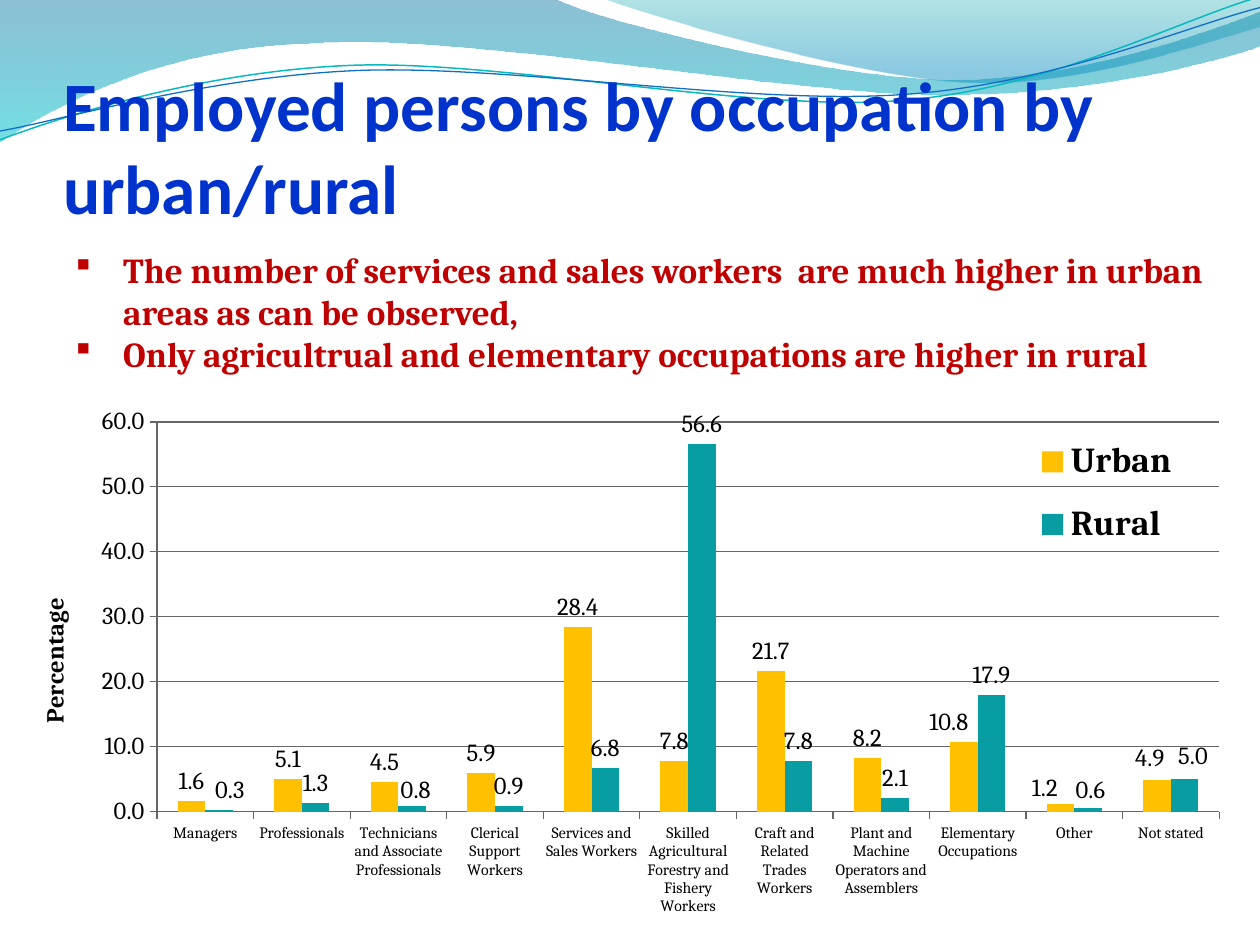
"""Build a slide on employed persons by occupation in urban and rural areas."""
import math
from dataclasses import dataclass

from lxml import etree
from pptx import Presentation
from pptx import util as u
from pptx.chart.data import CategoryChartData
from pptx.dml.color import RGBColor
from pptx.enum import chart as ch
from pptx.enum import text
from pptx.oxml import parse_xml
from pptx.oxml.ns import nsdecls, qn

COLORS = {
    "title": "0033CC", "findings": "C00000", "black": "000000", "grid": "666666",
    "urban": "FFC000", "rural": "089CA3", "teal_line": "0AB8BF", "blue_line": "0F6FC6",
    "deep_blue": "0074A1", "cyan": "00C6CF", "teal": "00A1A9", "sky": "008BBF",
}


@dataclass(frozen=True)
class Stop:
    position: float
    color: str
    opacity: int


@dataclass(frozen=True)
class Wave:
    """An outline whose two-number steps are lines and six-number steps are curves."""
    box: tuple
    start: tuple
    steps: tuple
    stops: tuple = ()
    line_color: str = ""
    line_width: float = 0
    rotation: float = 0


@dataclass(frozen=True)
class Area:
    name: str
    color: str
    values: tuple
    label_shifts: dict


WAVES = (
    Wave((-0.01, -0.01, 10.02, 1.14), (0, 0),
         ((4.4, -0.01), (4.76, 0.17, 6.64, 0.63, 7.58, 0.63),
          (8.53, 0.63, 9.58, 0.26, 10, 0.09), (10.01, 0.36),
          (9.83, 0.44, 8.7, 0.76, 7.46, 0.75), (6.22, 0.75, 3.82, 0.28, 2.57, 0.34),
          (1.29, 0.36, 0.46, 0.83, -0.01, 1.13), (0, 0)),
         stops=(Stop(0, "deep_blue", 45), Stop(1, "cyan", 55))),
    Wave((4.79, -0.01, 5.21, 0.7), (4.79, -0.01),
         ((5.09, 0.11, 6.82, 0.62, 7.69, 0.65), (8.56, 0.69, 9.61, 0.32, 10, 0.21),
          (10, 0), (4.79, -0.01)),
         stops=(Stop(0, "teal", 30), Stop(0.8, "sky", 45))),
    Wave((-0.02, 0.22, 10.02, 0.71), (0, 1.11),
         ((0.48, 0.93, 1.58, 0.57, 2.77, 0.52), (3.95, 0.47, 5.93, 0.89, 7.13, 0.8),
          (8.33, 0.71, 9.38, 0.15, 9.98, -0.02)),
         line_color="teal_line", line_width=0.85, rotation=357.3),
    Wave((-0.02, 0.3, 10.03, 0.58), (0, 1.04),
         ((0.47, 0.96, 1.64, 0.61, 2.83, 0.56), (4.03, 0.51, 5.97, 0.84, 7.17, 0.75),
          (8.36, 0.67, 9.41, 0.21, 10, 0.06)),
         line_color="blue_line", line_width=0.75, rotation=357.3),
)
OCCUPATIONS = (
    "Managers", "Professionals", "Technicians and Associate Professionals",
    "Clerical Support Workers", "Services and Sales Workers",
    "Skilled Agricultural Forestry and Fishery Workers", "Craft and Related Trades Workers",
    "Plant and Machine Operators and Assemblers", "Elementary Occupations", "Other", "Not stated",
)
AREAS = (
    Area("Urban", "urban", (1.6, 5.1, 4.5, 5.9, 28.4, 7.8, 21.7, 8.2, 10.8, 1.2, 4.9),
         {8: (-0.0125, 0), 9: (-0.013, 0.007), 10: (-0.006, -0.004)}),
    Area("Rural", "rural", (0.3, 1.3, 0.8, 0.9, 6.8, 56.6, 7.8, 2.1, 17.9, 0.6, 5.0),
         {0: (0.009, 0), 2: (0.003, 0.006), 9: (0.002, 0.004), 10: (0.007, -0.006)}),
)
FINDINGS = (
    "The number of services and sales workers  are much higher in urban areas as can be observed,",
    "Only agricultrual and elementary occupations are higher in rural",
)


def rgb(name: str) -> RGBColor:
    return RGBColor.from_string(COLORS[name])


def set_font(font, size: float, color: str, name: str = "Cambria", bold: bool = True) -> None:
    font.size, font.name, font.bold = u.Pt(size), name, bold
    font.color.rgb = rgb(color)


def local_point(wave: Wave, x: float, y: float) -> tuple:
    """Return a slide point in EMU within the wave's box before its rotation."""
    left, top, width, height = wave.box
    dx, dy = x - left - width / 2, y - top - height / 2
    angle = math.radians(-wave.rotation)
    return (u.Inches(dx * math.cos(angle) - dy * math.sin(angle) + width / 2),
            u.Inches(dx * math.sin(angle) + dy * math.cos(angle) + height / 2))


def build_outline(slide, wave: Wave):
    builder = slide.shapes.build_freeform(*local_point(wave, *wave.start))
    builder.add_line_segments([local_point(wave, *step[-2:]) for step in wave.steps],
                              close=bool(wave.stops))
    shape = builder.convert_to_shape()
    shape.left, shape.top, shape.width, shape.height = map(u.Inches, wave.box)
    shape.rotation = wave.rotation
    outline = shape._element.spPr.find(".//" + qn("a:path"))
    outline.set("w", str(shape.width))
    outline.set("h", str(shape.height))
    commands = [command for command in outline if command.tag != qn("a:close")]
    for command, step in zip(commands, (wave.start, *wave.steps)):
        if len(step) == 6:
            command.tag = qn("a:cubicBezTo")
        for point in list(command):
            command.remove(point)
        for index in range(0, len(step), 2):
            x, y = local_point(wave, *step[index:index + 2])
            etree.SubElement(command, qn("a:pt"), x=str(x), y=str(y))
    return shape


def draw_wave(slide, wave: Wave) -> None:
    shape = build_outline(slide, wave)
    shape.shadow.inherit = False
    if not wave.stops:
        shape.fill.background()
        shape.line.color.rgb = rgb(wave.line_color)
        shape.line.width = u.Pt(wave.line_width)
        return
    shape.line.fill.background()
    shape.fill.gradient()
    shape.fill.gradient_angle = 270
    for gradient_stop, stop in zip(shape.fill.gradient_stops, wave.stops):
        gradient_stop.position = stop.position
        gradient_stop.color.rgb = rgb(stop.color)
    for color, stop in zip(shape._element.spPr.iter(qn("a:srgbClr")), wave.stops):
        etree.SubElement(color, qn("a:alpha"), val=str(stop.opacity * 1000))


def place(element, index: int, **fractions) -> None:
    """Give a chart part a manual layout as its child at the index."""
    for old in element.findall(qn("c:layout")):
        element.remove(old)
    parts = "".join(f'<c:{key} val="{value}"/>' for key, value in fractions.items())
    element.insert(index, parse_xml(
        f'<c:layout {nsdecls("c")}><c:manualLayout>{parts}</c:manualLayout></c:layout>'))


def style_area(series, area: Area) -> None:
    series.format.fill.solid()
    series.format.fill.fore_color.rgb = rgb(area.color)
    series.invert_if_negative = False
    labels = series.data_labels
    labels.show_value = True
    labels.number_format, labels.number_format_is_linked = "0.0", False
    labels.position = ch.XL_LABEL_POSITION.OUTSIDE_END
    set_font(labels.font, 14, "black", bold=False)
    for index, (x, y) in area.label_shifts.items():
        label = series.points[index].data_label
        set_font(label.font, 14, "black", bold=False)
        label.position = ch.XL_LABEL_POSITION.OUTSIDE_END
        place(label._dLbl, 1, x=x, y=y)


def draw_chart(slide) -> None:
    data = CategoryChartData(number_format="0.0")
    data.categories = OCCUPATIONS
    for area in AREAS:
        data.add_series(area.name, area.values)
    box = map(u.Inches, (0.25, 3.03, 9.58, 4.31))
    chart = slide.shapes.add_chart(ch.XL_CHART_TYPE.COLUMN_CLUSTERED, *box, data).chart
    set_font(chart.font, 18, "black", bold=False)
    chart.has_title = False
    plot = chart.plots[0]
    plot.gap_width, plot.overlap, plot.vary_by_categories = 150, 0, False
    for series, area in zip(plot.series, AREAS):
        style_area(series, area)
    percentage = chart.value_axis
    percentage.minimum_scale, percentage.maximum_scale, percentage.major_unit = 0, 60, 10
    percentage.tick_labels.number_format = "0.0"
    percentage.tick_labels.number_format_is_linked = False
    percentage.major_gridlines.format.line.color.rgb = rgb("grid")
    for axis, size in ((chart.category_axis, 9), (percentage, 14)):
        axis.major_tick_mark = ch.XL_TICK_MARK.OUTSIDE
        axis.format.line.color.rgb = rgb("grid")
        set_font(axis.tick_labels.font, size, "black", bold=False)
    caption = percentage.axis_title.text_frame.paragraphs[0]
    caption.text = "Percentage"
    set_font(caption.font, 14, "black")
    place(percentage.axis_title._element, 1, xMode="edge", yMode="edge", x=0.002, y=0.39)
    place(chart._chartSpace.chart.plotArea, 0, layoutTarget="inner", xMode="edge", yMode="edge",
          x=0.104, y=0.074, w=0.88, h=0.718)
    chart.has_legend = True
    chart.legend.position = ch.XL_LEGEND_POSITION.BOTTOM
    chart.legend.include_in_layout = False
    set_font(chart.legend.font, 20, "black")
    place(chart.legend._element, 1, xMode="edge", yMode="edge", x=0.816, y=0.07, w=0.15, h=0.27)


def write_title(slide) -> None:
    title = slide.shapes.title
    slide.shapes._spTree.append(title._element)
    title.left, title.top, title.width, title.height = map(u.Inches, (0.5, 0.5, 9, 1.31))
    frame = title.text_frame
    frame.text = "Employed persons by occupation by urban/rural"
    frame.vertical_anchor = text.MSO_ANCHOR.BOTTOM
    frame.margin_left = frame.margin_right = frame.margin_bottom = 0
    frame.paragraphs[0].alignment = text.PP_ALIGN.LEFT
    set_font(frame.paragraphs[0].font, 39.6, "title", "Calibri")


def write_findings(slide) -> None:
    frame = slide.shapes.add_textbox(*map(u.Inches, (0.5, 1.92, 9.5, 1.11))).text_frame
    frame.word_wrap = True
    frame.text = "\n".join(FINDINGS)
    for paragraph in frame.paragraphs:
        set_font(paragraph.font, 20, "findings")
        properties = paragraph._p.get_or_add_pPr()
        properties.set("marL", str(u.Inches(0.38)))
        properties.set("indent", str(u.Inches(-0.38)))
        properties.insert(0, parse_xml(f'<a:buFont {nsdecls("a")} typeface="Wingdings"/>'))
        properties.insert(1, parse_xml(f'<a:buChar {nsdecls("a")} char="§"/>'))


def main() -> None:
    deck = Presentation()
    deck.slide_width, deck.slide_height = u.Inches(10), u.Inches(7.5)
    slide = deck.slides.add_slide(deck.slide_layouts[5])
    for wave in WAVES:
        draw_wave(slide, wave)
    draw_chart(slide)
    write_title(slide)
    write_findings(slide)
    deck.save("out.pptx")


if __name__ == "__main__":
    main()
